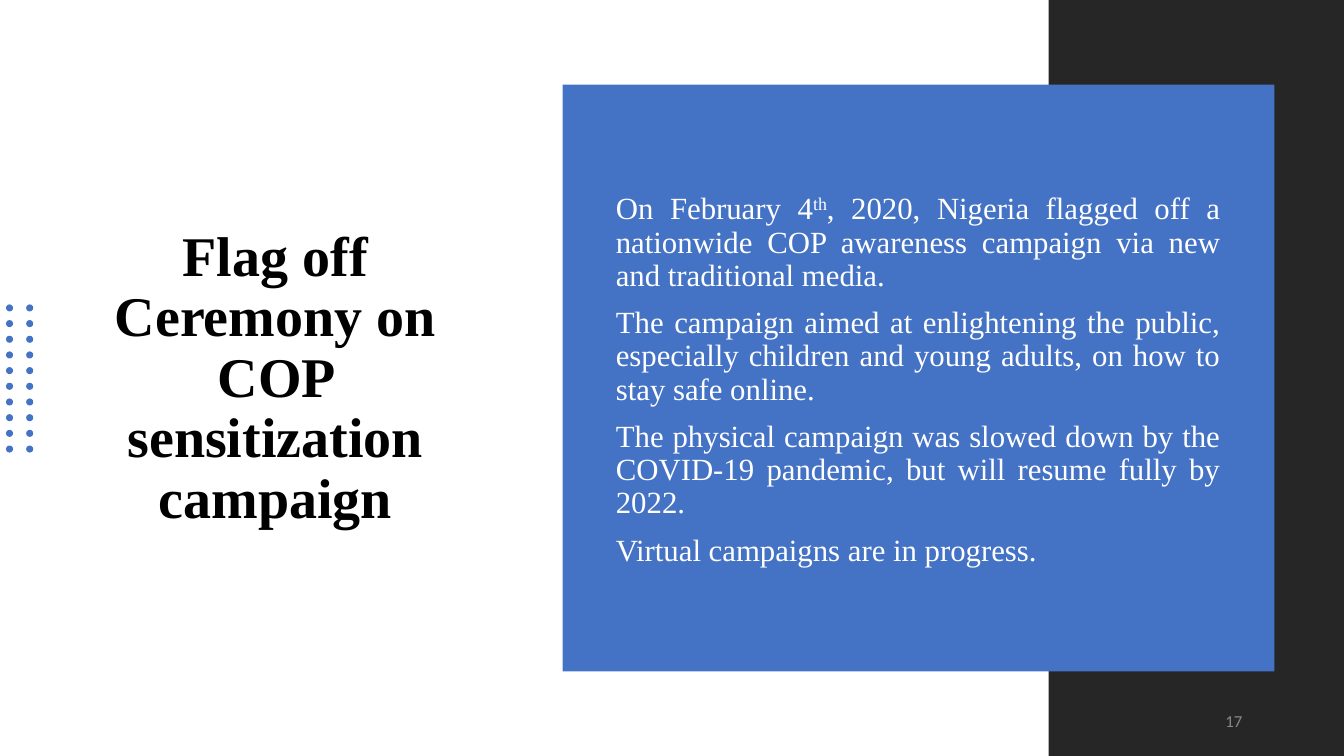
"""Build the slide on the flag-off ceremony of the COP sensitization campaign."""
from pptx import Presentation
from pptx.dml.color import RGBColor
from pptx.enum.shapes import MSO_SHAPE
from pptx.enum.text import MSO_ANCHOR, MSO_AUTO_SIZE, PP_ALIGN
from pptx.util import Inches, Pt

TITLE = "Flag off Ceremony on COP sensitization campaign"
BODY = [
    [("On February 4", False), ("th", True),
     (", 2020, Nigeria flagged off a nationwide COP awareness campaign via new "
      "and traditional media.", False)],
    [("The campaign aimed at enlightening the public, especially children and "
      "young adults, on how to stay safe online.", False)],
    [("The physical campaign was slowed down by the COVID-19 pandemic, but will "
      "resume fully by 2022.", False)],
    [("Virtual campaigns are in progress.", False)],
]
PAGE = "17"

SERIF, SANS = "Times New Roman", "Calibri"
BLUE, DARK, WHITE, BLACK, GREY = "4472C4", "262626", "FFFFFF", "000000", "898989"
DOT_ROWS, DOT_COLS, DOT_SIZE = 10, 2, 0.07
DOT_LEFT, DOT_TOP, DOT_DX, DOT_DY = 0.06, 3.02, 0.2, 1.4 / 9


def color(value):
    return RGBColor.from_string(value)


def add_filled(slide, kind, box, fill):
    sp = slide.shapes.add_shape(kind, *map(Inches, box))
    sp.shadow.inherit = False
    sp.fill.solid()
    sp.fill.fore_color.rgb = color(fill)
    sp.line.fill.background()
    return sp


def set_frame(sp):
    tf = sp.text_frame
    tf.word_wrap = True
    tf.auto_size = MSO_AUTO_SIZE.NONE
    tf.vertical_anchor = MSO_ANCHOR.MIDDLE
    return tf


def add_text(slide, box):
    return set_frame(slide.shapes.add_textbox(*map(Inches, box)))


def format_paragraph(p, align, font, size, fill, bold=False):
    p.alignment = align
    for r in p.runs:
        r.font.name = font
        r.font.size = Pt(size)
        r.font.bold = bold
        r.font.color.rgb = color(fill)


def add_title(slide):
    sp = slide.shapes.title
    sp.left, sp.top, sp.width, sp.height = map(Inches, (0.65, 1.14, 4.16, 5.24))
    tf = set_frame(sp)
    tf.text = TITLE
    p = tf.paragraphs[0]
    p.line_spacing = 0.9
    format_paragraph(p, PP_ALIGN.CENTER, SERIF, 40, BLACK, bold=True)


def add_dots(slide):
    for row in range(DOT_ROWS):
        for col in range(DOT_COLS):
            box = (DOT_LEFT + col * DOT_DX, DOT_TOP + row * DOT_DY, DOT_SIZE, DOT_SIZE)
            add_filled(slide, MSO_SHAPE.OVAL, box, BLUE)


def add_body(slide):
    tf = add_text(slide, (6.01, 1.29, 6.19, 4.97))
    for i, parts in enumerate(BODY):
        p = tf.add_paragraph() if i else tf.paragraphs[0]
        p.line_spacing = 0.9
        p.space_before = Pt(10)
        for text, raised in parts:
            r = p.add_run()
            r.text = text
            if raised:
                r.font._element.set("baseline", "30000")
        format_paragraph(p, PP_ALIGN.JUSTIFY, SERIF, 22, WHITE)


def add_page_number(slide):
    tf = add_text(slide, (9.42, 6.95, 3, 0.4))
    tf.text = PAGE
    format_paragraph(tf.paragraphs[0], PP_ALIGN.RIGHT, SANS, 12, GREY)


def main():
    prs = Presentation()
    prs.slide_width, prs.slide_height = Inches(13.33), Inches(7.5)
    slide = prs.slides.add_slide(prs.slide_layouts[5])
    add_title(slide)
    add_dots(slide)
    add_filled(slide, MSO_SHAPE.RECTANGLE, (10.4, 0, 2.93, 7.5), DARK)
    add_filled(slide, MSO_SHAPE.RECTANGLE, (5.58, 0.84, 7.06, 5.82), BLUE)
    add_body(slide)
    add_page_number(slide)
    prs.save("out.pptx")


if __name__ == "__main__":
    main()
